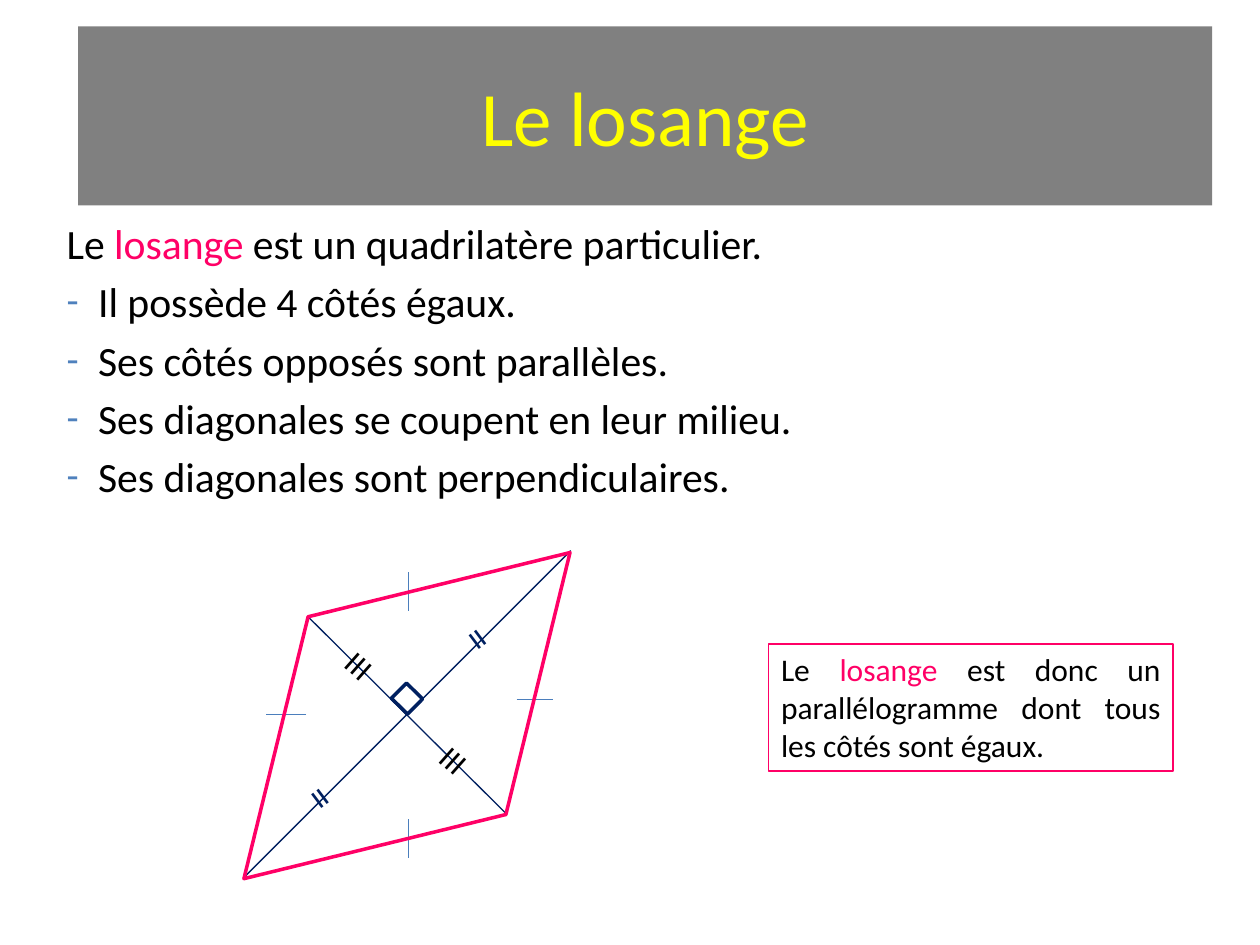
from lxml import etree
from pptx import Presentation
from pptx.dml.color import RGBColor
from pptx.enum.shapes import MSO_CONNECTOR, MSO_SHAPE
from pptx.enum.text import MSO_ANCHOR, MSO_AUTO_SIZE, PP_ALIGN
from pptx.oxml.ns import qn
from pptx.util import Inches, Pt

GREY = RGBColor(0x80, 0x80, 0x80)
YELLOW = RGBColor(0xFF, 0xFF, 0x00)
PINK = RGBColor(0xFF, 0x00, 0x66)
BLACK = RGBColor(0x00, 0x00, 0x00)
BLUE = RGBColor(0x4B, 0x7E, 0xBC)
BULLET_BLUE = RGBColor(0x4F, 0x81, 0xBD)
NAVY = RGBColor(0x00, 0x20, 0x60)

TITLE = "Le losange"
DEFINITION = [("Le ", BLACK), ("losange ", PINK),
              ("est un quadrilatère particulier.", BLACK)]
PROPERTIES = [
    ("Il possède 4 côtés égaux.", None),
    ("Ses côtés opposés sont parallèles.", None),
    ("Ses diagonales se coupent en leur milieu.", PP_ALIGN.JUSTIFY),
    ("Ses diagonales sont perpendiculaires.", PP_ALIGN.JUSTIFY),
]
CONCLUSION = [("Le ", BLACK), ("losange", PINK),
              (" est donc un parallélogramme dont tous les côtés sont égaux.", BLACK)]

SIDE_TICKS = [(3.24, 4.54, 3.24, 4.85), (3.24, 6.5, 3.24, 6.81),
              (4.1, 5.55, 4.39, 5.55), (2.43, 5.67, 2.11, 5.67)]
DIAGONALS = [(2.45, 4.9, 4.02, 6.46), (4.53, 4.37, 1.93, 6.97)]
LONG_HALF_MARKS = [(3.64, 4.79, 0.31, 0.5), (2.39, 6.05, 0.31, 0.5)]
SHORT_HALF_MARKS = [(2.65, 5.11, 0.48, 0.4), (3.4, 5.86, 0.48, 0.4)]

prs = Presentation()
prs.slide_width, prs.slide_height = Inches(10), Inches(7.5)
slide = prs.slides.add_slide(prs.slide_layouts[6])


def inches(box):
    return [Inches(length) for length in box]


def add_outline(kind, box, line=None, width=1, fill=None, rotation=0):
    shape = slide.shapes.add_shape(kind, *inches(box))
    shape.shadow.inherit = False
    shape.rotation = rotation
    if fill is None:
        shape.fill.background()
    else:
        shape.fill.solid()
        shape.fill.fore_color.rgb = fill
    if line is None:
        shape.line.fill.background()
    else:
        shape.line.color.rgb = line
        shape.line.width = Pt(width)
    return shape


def add_line(ends, color):
    line = slide.shapes.add_connector(MSO_CONNECTOR.STRAIGHT, *inches(ends))
    line.line.color.rgb = color
    line.line.width = Pt(0.75)
    etree.SubElement(line._element.spPr, qn("a:effectLst"))


def write(paragraph, runs, size, align=None):
    paragraph.alignment = align
    for text, color in runs:
        run = paragraph.add_run()
        run.text = text
        run.font.name = "Calibri"
        run.font.size = Pt(size)
        run.font.color.rgb = color


def space_before(paragraph, percent):
    spacing = etree.SubElement(paragraph._p.get_or_add_pPr(), qn("a:spcBef"))
    etree.SubElement(spacing, qn("a:spcPct"), val=str(percent * 1000))


def add_dash(paragraph):
    props = paragraph._p.get_or_add_pPr()
    props.set("marL", str(Inches(0.25)))
    props.set("indent", str(Inches(-0.25)))
    color = etree.SubElement(props, qn("a:buClr"))
    etree.SubElement(color, qn("a:srgbClr"), val=str(BULLET_BLUE))
    etree.SubElement(props, qn("a:buSzPct"), val="95000")
    etree.SubElement(props, qn("a:buFont"), typeface="Calibri")
    etree.SubElement(props, qn("a:buChar"), char="-")


def add_mark(text, box, rotation, size, color):
    mark = slide.shapes.add_textbox(*inches(box))
    mark.rotation = rotation
    mark.text_frame.word_wrap = True
    mark.text_frame.auto_size = MSO_AUTO_SIZE.SHAPE_TO_FIT_TEXT
    write(mark.text_frame.paragraphs[0], [(text, color)], size)


banner = add_outline(MSO_SHAPE.RECTANGLE, (0.62, 0.21, 9, 1.42), fill=GREY)
banner.text_frame.vertical_anchor = MSO_ANCHOR.MIDDLE
write(banner.text_frame.paragraphs[0], [(TITLE, YELLOW)], 44, PP_ALIGN.CENTER)

lesson = slide.shapes.add_textbox(*inches((0.43, 1.68, 9.29, 2.07))).text_frame
lesson.word_wrap = True
write(lesson.paragraphs[0], DEFINITION, 23.8)
space_before(lesson.paragraphs[0], 20)
for text, align in PROPERTIES:
    item = lesson.add_paragraph()
    write(item, [(text, BLACK)], 23.8, align)
    space_before(item, 20)
    add_dash(item)

conclusion = add_outline(MSO_SHAPE.RECTANGLE, (6.1, 5.11, 3.21, 1.01), PINK).text_frame
conclusion.word_wrap = True
conclusion.auto_size = MSO_AUTO_SIZE.SHAPE_TO_FIT_TEXT
conclusion.vertical_anchor = MSO_ANCHOR.TOP
write(conclusion.paragraphs[0], CONCLUSION, 18, PP_ALIGN.JUSTIFY)

for tick in SIDE_TICKS:
    add_line(tick, BLUE)
for diagonal in DIAGONALS:
    add_line(diagonal, NAVY)
add_outline(MSO_SHAPE.RECTANGLE, (3.14, 5.46, 0.18, 0.17), NAVY, 2, rotation=44.8)
for box in LONG_HALF_MARKS:
    add_mark("=", box, 53.1, 24, NAVY)
add_outline(MSO_SHAPE.DIAMOND, (2.12, 3.85, 2.22, 3.66), PINK, 2, rotation=45)
for box in SHORT_HALF_MARKS:
    add_mark("III", box, 41.6, 18, BLACK)

prs.save("out.pptx")
